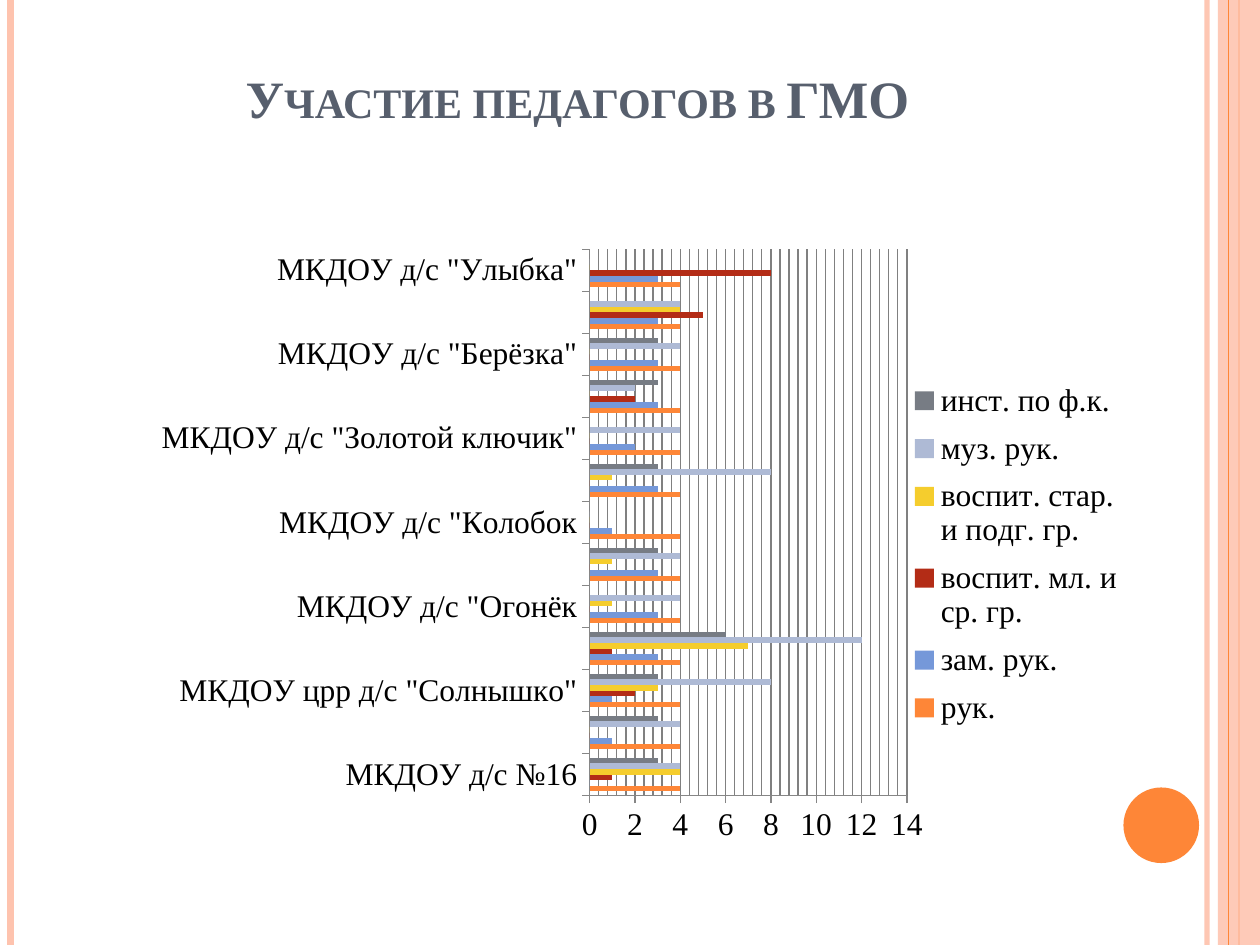
from copy import deepcopy

from lxml import etree
from pptx import Presentation
from pptx.chart.data import CategoryChartData
from pptx.dml.color import RGBColor
from pptx.enum.chart import XL_CHART_TYPE, XL_LEGEND_POSITION, XL_TICK_MARK
from pptx.enum.shapes import MSO_CONNECTOR, MSO_SHAPE
from pptx.enum.text import MSO_ANCHOR, PP_ALIGN
from pptx.oxml.ns import qn
from pptx.util import Pt

FONT = "Times New Roman"
COLORS = {
    "pink": "FEC3AE", "orange": "FE8637", "title": "575F6D", "text": "000000",
    "axis": "868686", "grid": "808080",
    "blue": "7598D9", "red": "B32C16", "yellow": "F5CD2D",
    "lilac": "AEBAD5", "gray": "777C84",
}


def color(name):
    return RGBColor.from_string(COLORS[name])


def add_stripe(x, color_name, width):
    """Draw a vertical line over the full slide height and return its spPr."""
    stripe = slide.shapes.add_connector(
        MSO_CONNECTOR.STRAIGHT, Pt(x), Pt(0), Pt(x), presentation.slide_height)
    stripe.line.color.rgb = color(color_name)
    stripe.line.width = Pt(width)
    properties = stripe._element.spPr
    etree.SubElement(properties, qn("a:effectLst"))
    return properties


presentation = Presentation()
presentation.slide_width, presentation.slide_height = Pt(720), Pt(540)
slide = presentation.slides.add_slide(presentation.slide_layouts[6])

# Side decoration
thin_stripe = add_stripe(689.76, "pink", 3)
add_stripe(6, "pink", 4.5)
add_stripe(708, "orange", 1.5)

band = slide.shapes.add_shape(MSO_SHAPE.RECTANGLE, Pt(696), Pt(0), Pt(24), Pt(540))
add_stripe(702, "orange", 0.75)
circle = slide.shapes.add_shape(MSO_SHAPE.OVAL, Pt(642), Pt(450), Pt(43.2), Pt(43.2))
for shape, fill in ((band, "pink"), (circle, "orange")):
    shape.shadow.inherit = False
    shape.fill.solid()
    shape.fill.fore_color.rgb = color(fill)
    shape.line.fill.background()

for properties, opacity in ((thin_stripe, 93), (band._element.spPr, 87)):
    rgb = next(properties.iter(qn("a:srgbClr")))
    etree.SubElement(rgb, qn("a:alpha")).set("val", str(opacity * 1000))

# Title
title = slide.shapes.add_textbox(Pt(36), Pt(21.6), Pt(588), Pt(90))
text_frame = title.text_frame
text_frame.word_wrap = True
text_frame.vertical_anchor = MSO_ANCHOR.BOTTOM
text_frame.margin_bottom = Pt(38)
text_frame.text = "Участие педагогов в ГМО"
paragraph = text_frame.paragraphs[0]
paragraph.alignment = PP_ALIGN.CENTER
run = paragraph.runs[0]
run.font.name, run.font.size, run.font.bold = FONT, Pt(30), True
run.font.color.rgb = color("title")
run.font._element.set("cap", "small")

# Chart
SERIES = [
    ("рук.", "orange", [4] * 13),
    ("зам. рук.", "blue", [0, 1, 1, 3, 3, 3, 1, 3, 2, 3, 3, 3, 3]),
    ("воспит. мл. и ср. гр.", "red", [1, 0, 2, 1, 0, 0, 0, 0, 0, 2, 0, 5, 8]),
    ("воспит. стар. и подг. гр.", "yellow", [4, 0, 3, 7, 1, 1, 0, 1, 0, 0, 0, 4, 0]),
    ("муз. рук.", "lilac", [4, 4, 8, 12, 4, 4, 0, 8, 4, 2, 4, 4, 0]),
    ("инст. по ф.к.", "gray", [3, 3, 3, 6, 0, 3, 0, 3, 0, 3, 3, 0, 0]),
]
chart_data = CategoryChartData()
chart_data.categories = [
    'МКДОУ д/с №16', 'МКДОУ д/с "Тополёк"', 'МКДОУ црр д/с "Солнышко"',
    'МКДОУ д/с "Родничок"', 'МКДОУ д/с "Огонёк', 'МКДОУ д/с  "Колокольчик"',
    'МКДОУ д/с "Колобок', 'МКДОУ црр д/с "Золотой  петушок"',
    'МКДОУ д/с "Золотой ключик"', 'МКДОУ д/с "Звёздочка"',
    'МКДОУ д/с "Берёзка"', 'МКДОУ д/с "Алёнушка"', 'МКДОУ д/с "Улыбка"',
]
for name, _, values in SERIES:
    chart_data.add_series(name, values)

chart = slide.shapes.add_chart(
    XL_CHART_TYPE.BAR_CLUSTERED, Pt(82), Pt(128), Pt(566.6), Pt(363), chart_data).chart
chart.has_title = False
chart.font.name, chart.font.size = FONT, Pt(18)
chart.font.color.rgb = color("text")
plot = chart.plots[0]
plot.vary_by_categories = False
plot.gap_width = 150
for series, (_, fill, _) in zip(plot.series, SERIES):
    series.format.fill.solid()
    series.format.fill.fore_color.rgb = color(fill)

value_axis = chart.value_axis
value_axis.minimum_scale, value_axis.maximum_scale = 0, 14
value_axis.major_unit, value_axis.minor_unit = 2, 0.4
value_axis.has_major_gridlines = value_axis.has_minor_gridlines = True
grid_line = value_axis.major_gridlines.format.line
grid_line.color.rgb = color("grid")
grid_line.width = Pt(0.75)
axis_element = value_axis._element
grid_style = axis_element.find(qn("c:majorGridlines")).find(qn("c:spPr"))
axis_element.find(qn("c:minorGridlines")).append(deepcopy(grid_style))
for axis in (value_axis, chart.category_axis):
    axis.major_tick_mark = XL_TICK_MARK.OUTSIDE
    axis.minor_tick_mark = XL_TICK_MARK.NONE
    axis.format.line.color.rgb = color("axis")
    axis.format.line.width = Pt(0.75)

chart.has_legend = True
chart.legend.position = XL_LEGEND_POSITION.RIGHT
chart.legend.include_in_layout = False

# Fixed places of the plot area and the legend, as fractions of the chart
plot_area = chart._chartSpace.chart.plotArea
legend = chart.legend._element
for parent, index, target, box in (
        (plot_area, 0, "inner", (0.45, 0.04, 0.32, 0.86)),
        (legend, 1, None, (0.77, 0.23, 0.22, 0.58))):
    for old_layout in parent.findall(qn("c:layout")):
        parent.remove(old_layout)
    layout = etree.Element(qn("c:layout"))
    parent.insert(index, layout)
    manual = etree.SubElement(layout, qn("c:manualLayout"))
    settings = [("layoutTarget", target)] if target else []
    settings += [("xMode", "edge"), ("yMode", "edge"), *zip("xywh", box)]
    for tag, value in settings:
        etree.SubElement(manual, qn("c:" + tag)).set("val", str(value))

presentation.save("out.pptx")
